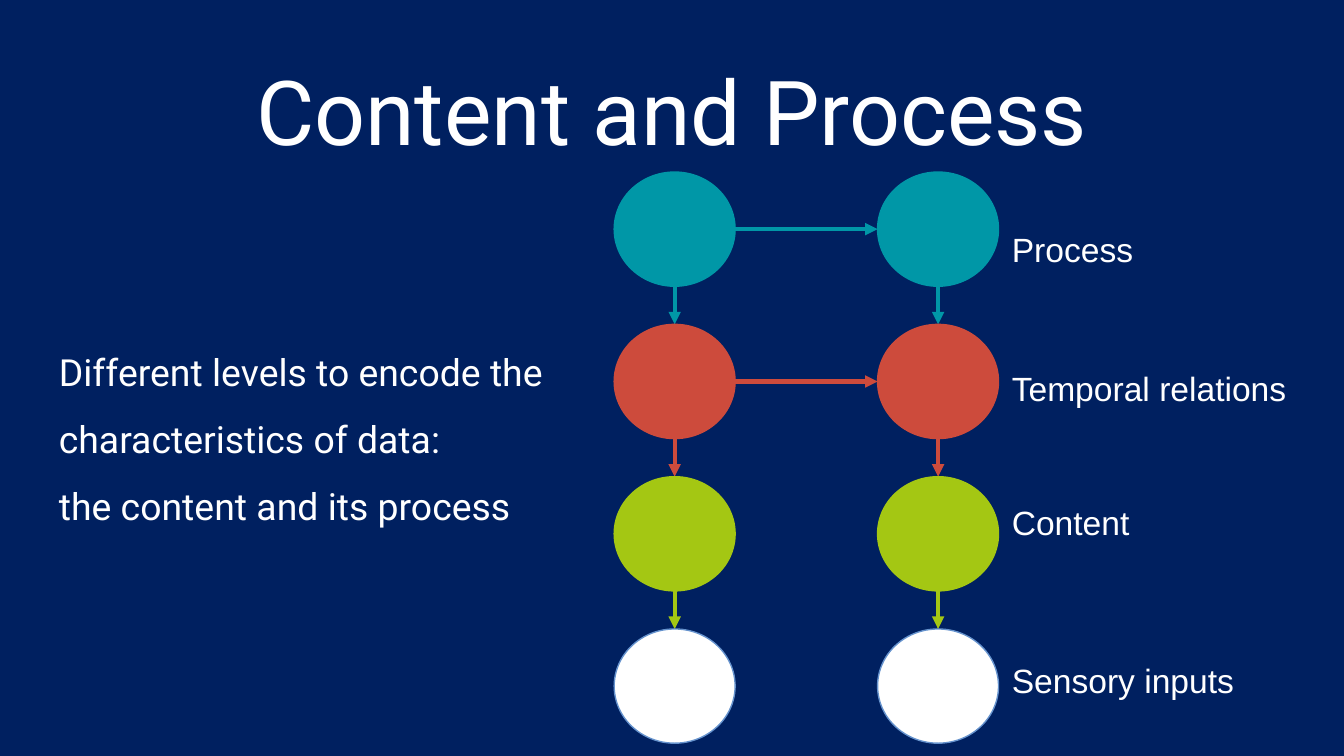
import pptx
import pptx.dml.color
import pptx.enum.shapes
import pptx.enum.text
import pptx.oxml
import pptx.util
from pptx.util import Inches

RGBColor = pptx.dml.color.RGBColor
NAVY = RGBColor(0x00, 0x20, 0x60)
WHITE = RGBColor(0xFF, 0xFF, 0xFF)
TEAL = RGBColor(0x00, 0x97, 0xA7)
RED = RGBColor(0xCD, 0x4B, 0x3C)
GREEN = RGBColor(0xA4, 0xC7, 0x13)
BLUE = RGBColor(0x65, 0x92, 0xCD)

LEVELS = [(TEAL, TEAL), (RED, RED), (GREEN, GREEN), (WHITE, BLUE)]
LINKED_LEVELS = 2
LABELS = [("Process", 0), ("Temporal relations", 49.4),
          ("Content", 47), ("Sensory inputs", 60)]
NODE_W, NODE_H = 0.9, 0.85


def format_text(tf, font, size, spacing=None):
    tf.word_wrap = True
    tf.margin_left = tf.margin_right = Inches(0.1)
    tf.margin_top = tf.margin_bottom = Inches(0.1)
    for p in tf.paragraphs:
        if spacing:
            p.line_spacing = spacing
        for r in p.runs:
            r.font.name = font
            r.font.size = pptx.util.Pt(size)
            r.font.color.rgb = WHITE


def add_title(s, x, y, w, h):
    sp = s.shapes.title
    sp.left, sp.top, sp.width, sp.height = map(Inches, (x, y, w, h))
    tf = sp.text_frame
    tf.text = "Content and Process"
    tf.vertical_anchor = pptx.enum.text.MSO_ANCHOR.MIDDLE
    tf.paragraphs[0].alignment = pptx.enum.text.PP_ALIGN.CENTER
    format_text(tf, "Roboto", 48)


def add_node(s, x, y, fill, outline):
    sp = s.shapes.add_shape(pptx.enum.shapes.MSO_SHAPE.OVAL,
                            *map(Inches, (x, y, NODE_W, NODE_H)))
    sp.shadow.inherit = False
    sp.fill.solid()
    sp.fill.fore_color.rgb = fill
    sp.line.color.rgb = outline
    sp.line.width = pptx.util.Pt(0.75)


def add_arrow(s, x1, y1, x2, y2, color):
    c = s.shapes.add_connector(pptx.enum.shapes.MSO_CONNECTOR.STRAIGHT,
                               *map(Inches, (x1, y1, x2, y2)))
    c.line.color.rgb = color
    c.line.width = pptx.util.Pt(2.25)
    ln = c.line._get_or_add_ln()
    tail = pptx.oxml.parse_xml(
        '<a:tailEnd xmlns:a="http://schemas.openxmlformats.org/drawingml/2006/main"'
        ' type="triangle"/>')
    ln.append(tail)
    effects = pptx.oxml.parse_xml(
        '<a:effectLst xmlns:a="http://schemas.openxmlformats.org/drawingml/2006/main"/>')
    ln.addnext(effects)


def add_network(s, x, y, w, h):
    pitch = (h - NODE_H) / (len(LEVELS) - 1)
    columns = [x, x + w - NODE_W]
    for i, (fill, outline) in enumerate(LEVELS):
        top = y + i * pitch
        for left in columns:
            add_node(s, left, top, fill, outline)
            if i < len(LEVELS) - 1:
                center = left + NODE_W / 2
                add_arrow(s, center, top + NODE_H, center, top + pitch, fill)
        if i < LINKED_LEVELS:
            middle = top + NODE_H / 2
            add_arrow(s, columns[0] + NODE_W, middle, columns[1], middle, fill)


def add_labels(s, x, y, w, h):
    tf = s.shapes.add_textbox(*map(Inches, (x, y, w, h))).text_frame
    tf.text = "\n".join(label for label, _ in LABELS)
    for p, (_, gap) in zip(tf.paragraphs, LABELS):
        p.space_before = pptx.util.Pt(gap)
    format_text(tf, "Arial", 18, 1.15)


def add_description(s, x, y, w, h):
    tf = s.shapes.add_textbox(*map(Inches, (x, y, w, h))).text_frame
    tf.text = ("Different levels to encode the characteristics of data:\v"
               "the content and its process")
    format_text(tf, "Roboto", 20, 1.5)


def main():
    prs = pptx.Presentation()
    prs.slide_width, prs.slide_height = Inches(10), Inches(10 * 9 / 16)
    s = prs.slides.add_slide(prs.slide_layouts[5])
    s.background.fill.solid()
    s.background.fill.fore_color.rgb = NAVY
    add_title(s, 0.34, 0.35, 9.32, 0.93)
    add_network(s, 4.57, 1.28, 2.86, 4.25)
    add_labels(s, 7.43, 1.56, 2.51, 3.79)
    add_description(s, 0.34, 2.33, 4.03, 2.11)
    prs.save("out.pptx")


if __name__ == "__main__":
    main()
